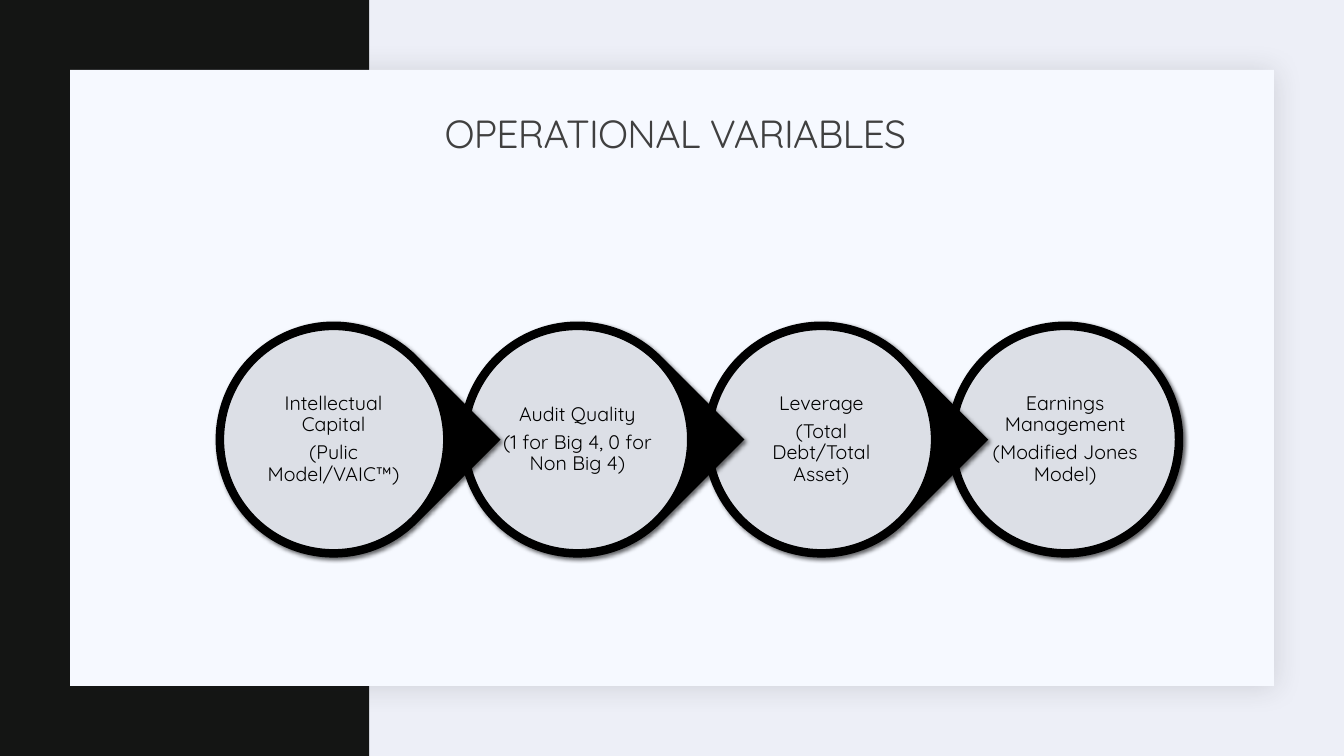
from lxml.etree import SubElement
from pptx import Presentation
from pptx.dml.color import RGBColor
from pptx.enum.shapes import MSO_SHAPE
from pptx.enum.text import MSO_ANCHOR, PP_ALIGN
from pptx.oxml.ns import qn
from pptx.util import Pt

FONT = "Quicksand"
COLORS = {
    "background": "EDEFF7",
    "band": "141514",
    "panel": "F6F9FF",
    "panel_shadow": "1F2125",
    "title": "404040",
    "black": "000000",
    "disc": "F5F8FF",
}
VARIABLES = [
    ("Intellectual Capital", "(Pulic Model/VAIC™)"),
    ("Audit Quality", "(1 for Big 4, 0 for Non Big 4)"),
    ("Leverage", "(Total Debt/Total Asset)"),
    ("Earnings Management", "(Modified Jones Model)"),
]


def rgb(name):
    return RGBColor.from_string(COLORS[name])


def add_filled(slide, preset, box, color):
    sp = slide.shapes.add_shape(preset, *map(Pt, box))
    sp.shadow.inherit = False
    sp.fill.solid()
    sp.fill.fore_color.rgb = rgb(color)
    sp.line.fill.background()
    return sp


def add_shadow(sp, color, alpha, blur, dist):
    """Cast a soft shadow to the lower right; alpha in percent, lengths in points."""
    effects = sp._element.spPr.find(qn("a:effectLst"))
    shadow = SubElement(effects, qn("a:outerShdw"), blurRad=str(Pt(blur)),
                        dist=str(Pt(dist)), dir=str(45 * 60000),
                        algn="ctr", rotWithShape="0")
    clr = SubElement(shadow, qn("a:srgbClr"), val=COLORS[color])
    SubElement(clr, qn("a:alpha"), val=str(alpha * 1000))


def add_text(slide, box, lines, size, color, space_after=0):
    sp = slide.shapes.add_textbox(*map(Pt, box))
    tf = sp.text_frame
    tf.word_wrap = True
    tf.vertical_anchor = MSO_ANCHOR.MIDDLE
    tf.margin_left = tf.margin_right = tf.margin_top = tf.margin_bottom = Pt(1.4)
    tf.text = "\n".join(lines)
    for p in tf.paragraphs:
        p.alignment = PP_ALIGN.CENTER
        p.line_spacing = 0.9
        p.space_after = Pt(space_after)
        font = p.runs[0].font
        font.name, font.size = FONT, Pt(size)
        font.color.rgb = rgb(color)
    return sp


def add_backdrop(slide, width, height):
    slide.background.fill.solid()
    slide.background.fill.fore_color.rgb = rgb("background")
    add_filled(slide, MSO_SHAPE.RECTANGLE, (0, 0, 263.7, height), "band")
    margin = 50
    panel = add_filled(slide, MSO_SHAPE.RECTANGLE,
                       (margin, margin, width - 2 * margin, height - 2 * margin), "panel")
    add_shadow(panel, "panel_shadow", 15, 20, 2)


def add_title(slide, box, text):
    sp = add_text(slide, box, [text], 28, "title")
    sp.text_frame.paragraphs[0].runs[0].font._element.set("spc", "-50")


def add_variable(slide, box, lines, is_last):
    """Draw one ringed disc, with a tip pointing right unless it ends the chain."""
    left, top, size = box

    def inset(gap):
        return left + gap, top + gap, size - 2 * gap, size - 2 * gap

    preset = MSO_SHAPE.OVAL if is_last else MSO_SHAPE.TEAR
    ring = add_filled(slide, preset, inset(0), "black")
    if not is_last:
        ring.adjustments[0] = 1.0
        ring.rotation = 45
    add_shadow(ring, "black", 60, 3, 2)

    disc = add_filled(slide, MSO_SHAPE.OVAL, inset(5.6), "disc")
    disc.line.color.rgb = rgb("black")
    disc.line.width = Pt(1)
    clr = disc._element.spPr.find(qn("a:solidFill")).find(qn("a:srgbClr"))
    SubElement(clr, qn("a:alpha"), val="90000")

    add_text(slide, inset(28.1), lines, 14, "black", space_after=4.9)


def add_chain(slide, left, top, size, pitch):
    """Place the variables from right to left, so each tip overlaps the next disc."""
    last = len(VARIABLES) - 1
    for i in range(last, -1, -1):
        add_variable(slide, (left + i * pitch, top, size), VARIABLES[i], i == last)


def main():
    width, height = 960, 540
    prs = Presentation()
    prs.slide_width, prs.slide_height = Pt(width), Pt(height)
    slide = prs.slides.add_slide(prs.slide_layouts[6])
    add_backdrop(slide, width, height)
    add_title(slide, (86.4, 74.2, 792, 46), "OPERATIONAL VARIABLES")
    add_chain(slide, left=154, top=229.7, size=168.6, pitch=174.2)
    prs.save("out.pptx")


if __name__ == "__main__":
    main()
